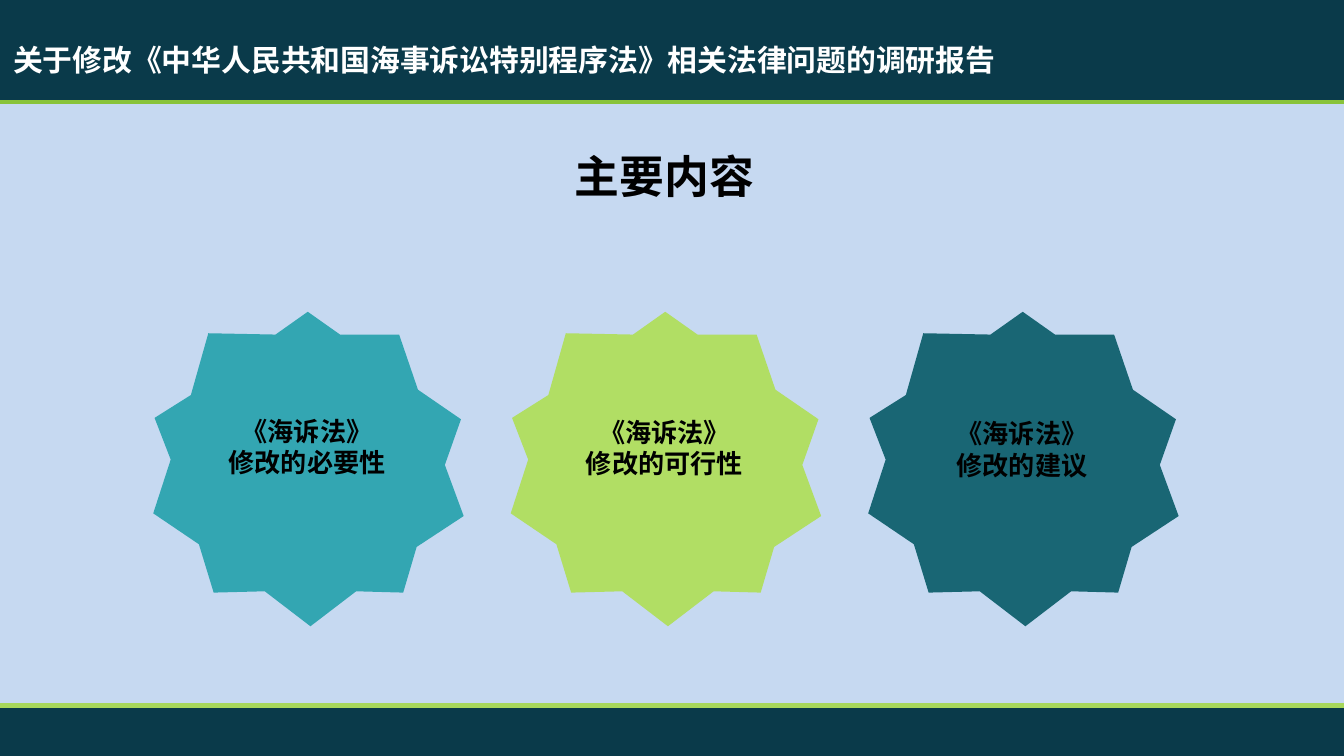
from dataclasses import dataclass

from lxml import etree
from pptx import Presentation
from pptx import util as u
from pptx.dml.color import RGBColor
from pptx.enum import shapes, text
from pptx.oxml.ns import qn

NAVY = RGBColor(0x0A, 0x3A, 0x4A)
GREEN = RGBColor(0x88, 0xC3, 0x3A)
LIME = RGBColor(0xA7, 0xD7, 0x5B)
TEAL = RGBColor(0x33, 0xA6, 0xB2)
LIGHT_LIME = RGBColor(0xB1, 0xDE, 0x64)
DEEP_TEAL = RGBColor(0x19, 0x66, 0x74)
SKY = RGBColor(0xC6, 0xD9, 0xF1)
BLACK = RGBColor(0, 0, 0)
WHITE = RGBColor(0xFF, 0xFF, 0xFF)

ARIAL = "Arial"
NOTO = "Noto Sans CJK SC"

SLIDE_W = 10
SLIDE_H = SLIDE_W * 9 / 16
PITCH = 2.66
BADGE_LEFT, BADGE_TOP = 1.14, 2.32
LABEL_INSET, LABEL_TOP, LABEL_STEP = 0.16, 3.04, 0.01

STAR_UNIT = u.Inches(0.01)
STAR = [
    (115, 0), (139, 17), (183, 17), (197, 58), (229, 80),
    (217, 114), (231, 152), (196, 175), (186, 209), (151, 208),
    (117, 234), (83, 208), (45, 209), (34, 173), (0, 150),
    (13, 110), (1, 79), (28, 62), (41, 16), (91, 17),
]


@dataclass(frozen=True)
class Run:
    text: str
    font: str = NOTO


@dataclass(frozen=True)
class Band:
    top: float
    height: float
    edge: float
    edge_color: RGBColor


@dataclass(frozen=True)
class Badge:
    color: RGBColor
    lines: list[list[Run]]


@dataclass(frozen=True)
class Caption:
    left: float
    top: float
    width: float
    height: float
    lines: list[list[Run]]
    size: int
    color: RGBColor = BLACK
    align: text.PP_ALIGN = text.PP_ALIGN.CENTER


BANDS = [
    Band(0, 0.75, 0.76, GREEN),
    Band(5.25, SLIDE_H - 5.25, 5.25, LIME),
]

BADGES = [
    Badge(TEAL, [[Run("《海诉法》", ARIAL)], [Run("修改的", ARIAL), Run("必要性")]]),
    Badge(LIGHT_LIME, [[Run("《海诉法》")], [Run("修改的可行性")]]),
    Badge(DEEP_TEAL, [[Run("《海诉法》")], [Run("修改的建议")]]),
]

CAPTIONS = [
    Caption(3.01, 1.06, 3.87, 0.51, [[Run("主要内容", ARIAL)]], 24),
    Caption(0, 0.26, 9.32, 0.37,
            [[Run("关于修改《中华人民共和国海事诉讼特别程序法》相关法律问题的调研报告", ARIAL)]],
            16, WHITE, text.PP_ALIGN.LEFT),
]


def paint(sp, color: RGBColor) -> None:
    sp.shadow.inherit = False
    sp.fill.solid()
    sp.fill.fore_color.rgb = color
    sp.line.fill.background()


def draw_band(s, band: Band) -> None:
    sp = s.shapes.add_shape(shapes.MSO_SHAPE.RECTANGLE, 0, u.Inches(band.top),
                            u.Inches(SLIDE_W), u.Inches(band.height))
    paint(sp, NAVY)
    y = u.Inches(band.edge)
    edge = s.shapes.add_connector(shapes.MSO_CONNECTOR.STRAIGHT, 0, y, u.Inches(SLIDE_W), y)
    edge.line.color.rgb = band.edge_color
    edge.line.width = u.Pt(2.5)
    etree.SubElement(edge._element.spPr, qn("a:effectLst"))


def draw_caption(s, caption: Caption) -> None:
    sp = s.shapes.add_textbox(u.Inches(caption.left), u.Inches(caption.top),
                              u.Inches(caption.width), u.Inches(caption.height))
    tf = sp.text_frame
    tf.word_wrap = True
    tf.auto_size = text.MSO_AUTO_SIZE.SHAPE_TO_FIT_TEXT
    for i, runs in enumerate(caption.lines):
        p = tf.add_paragraph() if i else tf.paragraphs[0]
        p.alignment = caption.align
        p.font.size = u.Pt(caption.size)
        p.font.bold = True
        p.font.color.rgb = caption.color
        p.font.name = runs[0].font
        for run in runs:
            r = p.add_run()
            r.text = run.text
            if run.font != runs[0].font:
                r.font.name = run.font


def draw_badge(s, column: int, badge: Badge) -> None:
    left = BADGE_LEFT + column * PITCH
    builder = s.shapes.build_freeform(*STAR[0], scale=STAR_UNIT)
    builder.add_line_segments(STAR[1:], close=True)
    paint(builder.convert_to_shape(u.Inches(left), u.Inches(BADGE_TOP)), badge.color)
    draw_caption(s, Caption(left + LABEL_INSET, LABEL_TOP + column * LABEL_STEP,
                            1.97, 0.57, badge.lines, 14))


def main() -> None:
    prs = Presentation()
    prs.slide_width, prs.slide_height = u.Inches(SLIDE_W), u.Inches(SLIDE_H)
    s = prs.slides.add_slide(prs.slide_layouts[6])
    s.background.fill.solid()
    s.background.fill.fore_color.rgb = SKY
    for band in BANDS:
        draw_band(s, band)
    for column, badge in enumerate(BADGES):
        draw_badge(s, column, badge)
    for caption in CAPTIONS:
        draw_caption(s, caption)
    prs.save("out.pptx")


if __name__ == "__main__":
    main()
